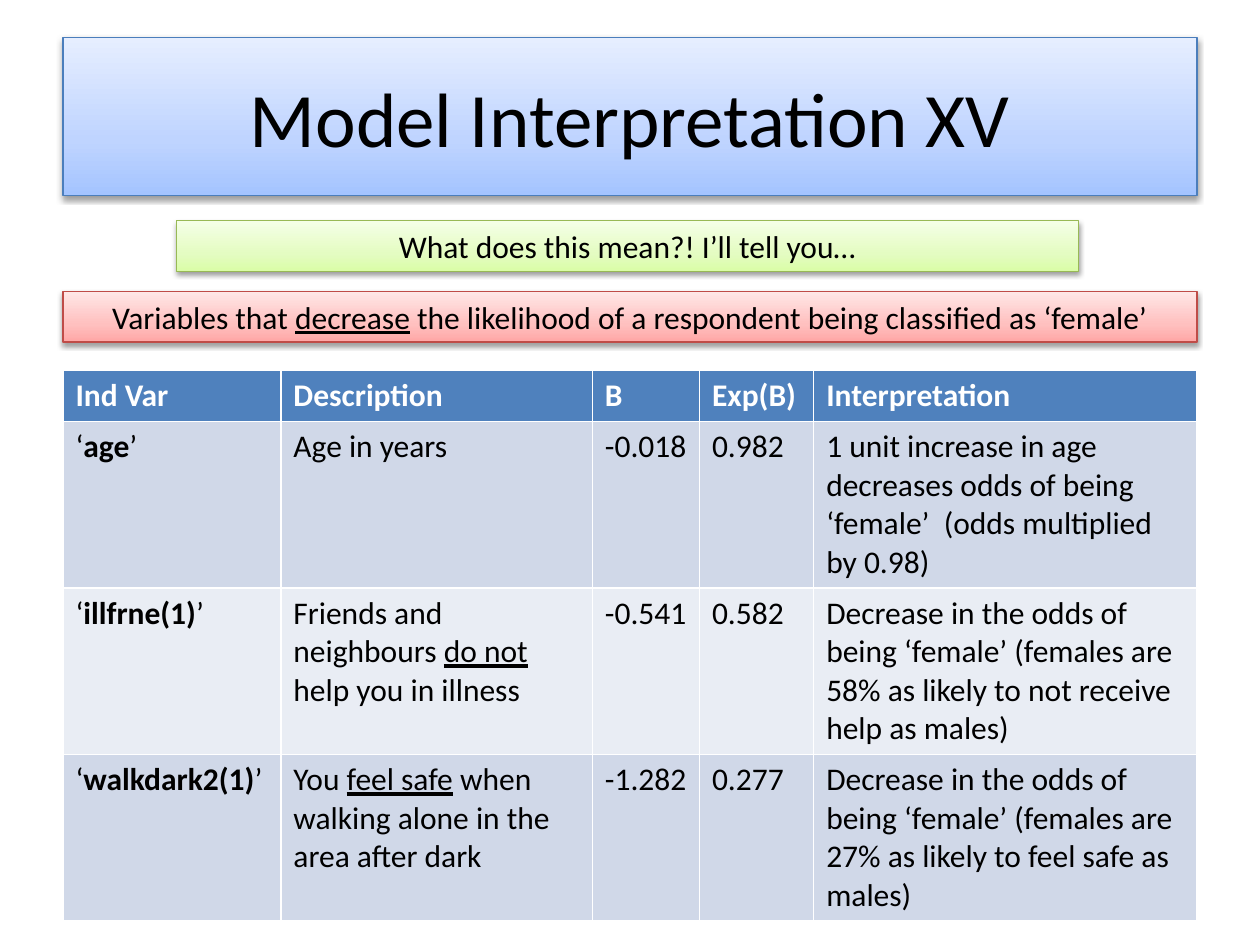
from copy import deepcopy

from lxml import etree
from pptx import Presentation
from pptx.dml.color import RGBColor
from pptx.enum.shapes import MSO_SHAPE
from pptx.enum.text import MSO_ANCHOR, PP_ALIGN
from pptx.oxml.ns import qn
from pptx.util import Pt

RECT = MSO_SHAPE.RECTANGLE
MIDDLE = MSO_ANCHOR.MIDDLE
LEFT, CENTER = PP_ALIGN.LEFT, PP_ALIGN.CENTER

BLACK = RGBColor(0x00, 0x00, 0x00)
WHITE = RGBColor(0xFF, 0xFF, 0xFF)
HEAD = RGBColor(0x4F, 0x81, 0xBD)
BANDS = [RGBColor(0xE9, 0xED, 0xF4), RGBColor(0xD0, 0xD8, 0xE8)]
BLUE = RGBColor(0x4B, 0x7E, 0xBC)
BLUES = [RGBColor(0xA4, 0xC4, 0xFF), RGBColor(0xBF, 0xD4, 0xFF), RGBColor(0xE6, 0xEE, 0xFF)]
GREEN = RGBColor(0x98, 0xB9, 0x55)
GREENS = [RGBColor(0xDA, 0xFD, 0xA7), RGBColor(0xE4, 0xFC, 0xC2), RGBColor(0xF5, 0xFF, 0xE7)]
RED = RGBColor(0xBF, 0x4C, 0x48)
REDS = [RGBColor(0xFF, 0xA6, 0xA5), RGBColor(0xFF, 0xC0, 0xBF), RGBColor(0xFF, 0xE7, 0xE7)]


def write(frame, text, size=18, color=BLACK, align=LEFT, bold=False, mark="underline"):
    frame.word_wrap = True
    para = frame.paragraphs[0]
    para.alignment = align
    for i, part in enumerate(text.split("|")):
        run = para.add_run()
        run.text = part
        font = run.font
        font.name, font.size, font.bold = "Calibri", Pt(size), bold
        font.color.rgb = color
        if i % 2:
            setattr(font, mark, True)


def style(shape, tones, edge):
    fill = shape.fill
    fill.gradient()
    fill.gradient_angle = 90
    stops = shape._element.spPr.find(qn("a:gradFill")).find(qn("a:gsLst"))
    stops.insert(1, deepcopy(stops[0]))
    for stop, spot, tone in zip(fill.gradient_stops, (0, 0.35, 1), tones):
        stop.position = spot
        stop.color.rgb = tone
    shape.line.color.rgb = edge
    shape.line.width = Pt(0.75)
    shape.shadow.inherit = False
    glow = etree.SubElement(
        shape._element.spPr.find(qn("a:effectLst")), qn("a:outerShdw"),
        blurRad=str(Pt(3.1)), dist=str(Pt(1.6)), dir="5400000", rotWithShape="0")
    shade = etree.SubElement(glow, qn("a:srgbClr"), val="000000")
    etree.SubElement(shade, qn("a:alpha"), val="38000")


deck = Presentation()
deck.slide_width, deck.slide_height = Pt(720), Pt(540)
slide = deck.slides.add_slide(deck.slide_layouts[5])

title = slide.shapes.title
title.left, title.top, title.width, title.height = Pt(36), Pt(21.6), Pt(648), Pt(90)
style(title, BLUES, BLUE)
title.text_frame.vertical_anchor = MIDDLE
write(title.text_frame, "Model Interpretation XV", size=44, align=CENTER)

bars = [
    (100.8, 126, 515.5, GREENS, GREEN, "What does this mean?! I’ll tell you…"),
    (36, 166.5, 648, REDS, RED,
     "Variables that |decrease| the likelihood of a respondent being classified as ‘female’"),
]
for x, y, wide, tones, edge, text in bars:
    bar = slide.shapes.add_shape(RECT, Pt(x), Pt(y), Pt(wide), Pt(29))
    style(bar, tones, edge)
    bar.text_frame.vertical_anchor = MIDDLE
    write(bar.text_frame, text, align=CENTER)

rows = [
    ("Ind Var", "Description", "B", "Exp(B)", "Interpretation"),
    ("‘|age|’", "Age in years", "-0.018", "0.982",
     "1 unit increase in age decreases odds of being ‘female’  (odds multiplied by 0.98)"),
    ("‘|illfrne(1)|’", "Friends and neighbours |do not| help you in illness", "-0.541", "0.582",
     "Decrease in the odds of being ‘female’ (females are 58% as likely to not receive help as males)"),
    ("‘|walkdark2(1)|’", "You |feel safe| when walking alone in the area after dark", "-1.282", "0.277",
     "Decrease in the odds of being ‘female’ (females are 27% as likely to feel safe as males)"),
]
widths = [124.5, 178, 61.2, 65.3, 219]
table = slide.shapes.add_table(
    len(rows), len(widths), Pt(36), Pt(211.7), Pt(648), Pt(310)).table
for col, wide in zip(table.columns, widths):
    col.width = Pt(wide)
for r, row in enumerate(rows):
    table.rows[r].height = Pt(93.5 if r else 29.2)
    for c, text in enumerate(row):
        cell = table.cell(r, c)
        cell.fill.solid()
        cell.fill.fore_color.rgb = BANDS[r % 2] if r else HEAD
        write(cell.text_frame, text, color=BLACK if r else WHITE, bold=r == 0,
              mark="underline" if c else "bold")

deck.save("out.pptx")
